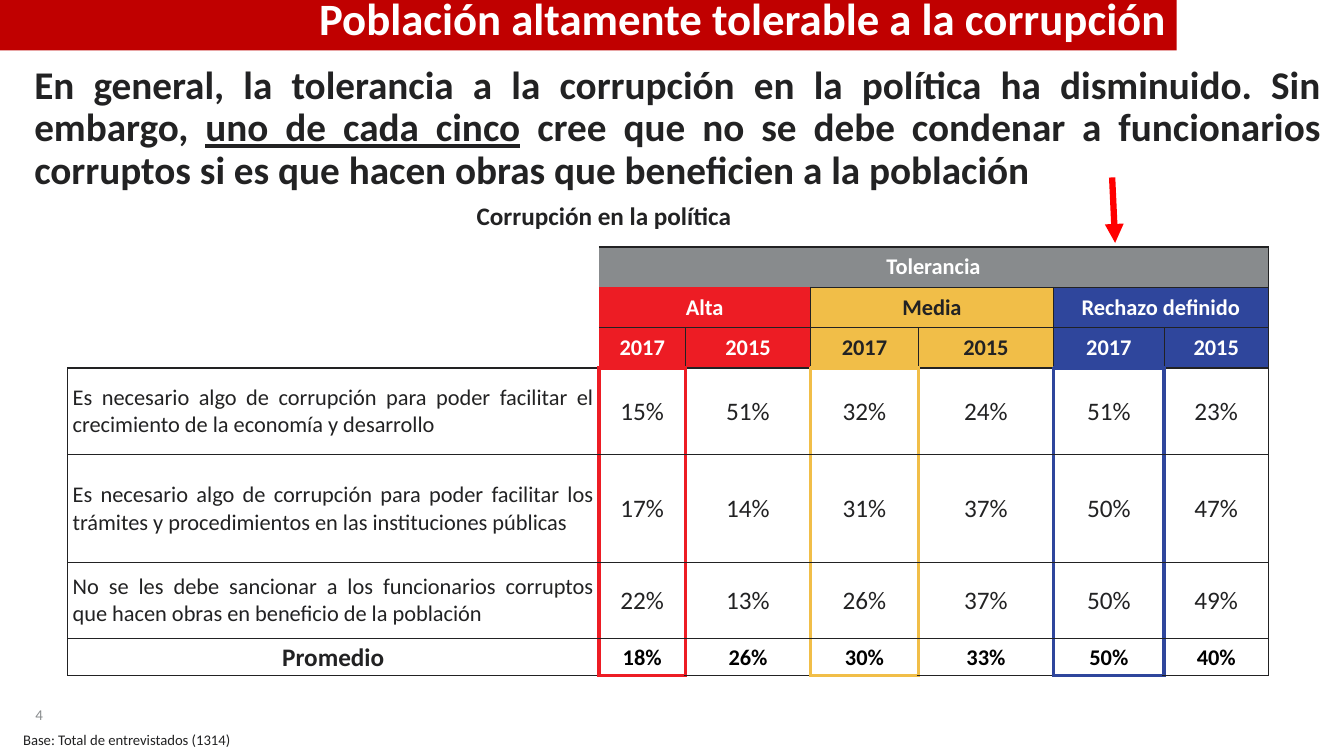
from lxml.etree import SubElement
from pptx import Presentation
from pptx.dml.color import RGBColor
from pptx.enum.shapes import MSO_CONNECTOR, MSO_SHAPE
from pptx.enum.text import MSO_ANCHOR, MSO_AUTO_SIZE, PP_ALIGN
from pptx.oxml.ns import qn
from pptx.util import Inches, Pt

SLIDE_WIDTH, SLIDE_HEIGHT = Inches(13.33), Inches(7.5)
FONT = "Calibri"
DARK, WHITE, BLACK, GREY = "222223", "FFFFFF", "000000", "888B8D"
BAR_RED, ARROW_RED = "C00000", "FF0000"
NO_TABLE_STYLE = "{2D5ABB26-0587-4C30-8999-92F81FD0307C}"

# name, fill, text colour of each tolerance level
LEVELS = [
    ("Alta", "ED1C24", WHITE),
    ("Media", "F1BE48", DARK),
    ("Rechazo definido", "2F469C", WHITE),
]
YEARS = ("2017", "2015")
STATEMENTS = [
    ("Es necesario algo de corrupción para poder facilitar el crecimiento "
     "de la economía y desarrollo", (15, 51, 32, 24, 51, 23)),
    ("Es necesario algo de corrupción para poder facilitar los trámites y "
     "procedimientos en las instituciones públicas", (17, 14, 31, 37, 50, 47)),
    ("No se les debe sancionar a los funcionarios corruptos que hacen obras "
     "en beneficio de la población", (22, 13, 26, 37, 50, 49)),
]
AVERAGES = (18, 26, 30, 33, 50, 40)
HEADER_ROWS = 3
AVERAGE_ROW = HEADER_ROWS + len(STATEMENTS)

# Percentages of the slide's width and height
COLUMN_SHARES = (39.53, 6.45, 9.3, 8.03, 10.05, 8.25, 7.73)
ROW_SHARES = (4.63, 4.63, 4.63, 11.47, 14.27, 10, 4.93)


def color(hex_code):
    return RGBColor.from_string(hex_code)


def across(share):
    return round(SLIDE_WIDTH * share / 100)


def down(share):
    return round(SLIDE_HEIGHT * share / 100)


def area(left, top, width, height):
    return across(left), down(top), across(width), down(height)


def style(paragraph, size, hex_code, bold=False, align=PP_ALIGN.LEFT):
    paragraph.alignment = align
    for run in paragraph.runs:
        run.font.name = FONT
        run.font.size = Pt(size)
        run.font.bold = bold
        run.font.color.rgb = color(hex_code)


def set_margins(owner, left, top, right, bottom):
    owner.margin_left, owner.margin_top = Inches(left), Inches(top)
    owner.margin_right, owner.margin_bottom = Inches(right), Inches(bottom)


def add_label(slide, place, text, size, hex_code, bold=False,
              align=PP_ALIGN.LEFT, margins=(0, 0, 0, 0), wrap=True,
              anchor=MSO_ANCHOR.TOP):
    frame = slide.shapes.add_textbox(*area(*place)).text_frame
    frame.text = text
    frame.word_wrap = wrap
    frame.vertical_anchor = anchor
    set_margins(frame, *margins)
    style(frame.paragraphs[0], size, hex_code, bold, align)
    return frame


def add_message(slide):
    message = slide.shapes.title
    message.left, message.top, message.width, message.height = area(2.55, 8.67, 95.72, 16.93)
    frame = message.text_frame
    frame.word_wrap = True
    frame.auto_size = MSO_AUTO_SIZE.SHAPE_TO_FIT_TEXT
    frame.vertical_anchor = MSO_ANCHOR.TOP
    set_margins(frame, 0, 0, 0, 0)
    sentence = frame.paragraphs[0]
    for text, underlined in (
        ("En general, la tolerancia a la corrupción en la política ha "
         "disminuido. Sin embargo, ", False),
        ("uno de cada cinco", True),
        (" cree que no se debe condenar a funcionarios corruptos si es que "
         "hacen obras que beneficien a la población", False),
    ):
        run = sentence.add_run()
        run.text = text
        run.font.underline = underlined
    style(sentence, 28, DARK, True, PP_ALIGN.JUSTIFY)
    sentence.line_spacing = 0.9
    sentence.space_before = Pt(5.4)


def add_heading_bar(slide):
    bar = slide.shapes.add_shape(MSO_SHAPE.RECTANGLE, *area(0, 0, 87.55, 6.67))
    bar.shadow.inherit = False
    bar.fill.solid()
    bar.fill.fore_color.rgb = color(BAR_RED)
    bar.line.fill.background()
    frame = bar.text_frame
    frame.text = "Población altamente tolerable a la corrupción"
    frame.vertical_anchor = MSO_ANCHOR.BOTTOM
    style(frame.paragraphs[0], 32, WHITE, True, PP_ALIGN.RIGHT)
    frame.paragraphs[0].line_spacing = 0.9


def add_arrow(slide, start, end):
    arrow = slide.shapes.add_connector(
        MSO_CONNECTOR.STRAIGHT, across(start[0]), down(start[1]), across(end[0]), down(end[1]))
    arrow.line.color.rgb = color(ARROW_RED)
    arrow.line.width = Pt(4.5)
    SubElement(arrow.line._get_or_add_ln(), qn("a:tailEnd"), type="triangle")
    SubElement(arrow._element.spPr, qn("a:effectLst"))


def edge(row, column, side):
    """Colour and width of a cell's side, or None where it has no line."""
    if row < HEADER_ROWS:
        if column == 0 and (row, side) != (HEADER_ROWS - 1, "B"):
            return None
        if column == 1 and side == "L":
            return None
        if column in (1, 2) and (row, side) in ((0, "B"), (1, "T")):
            return None
    if side in "LR":
        boundary = column + (side == "R")
        framed = row >= HEADER_ROWS and 1 <= boundary <= 6
    else:
        boundary = column
        framed = column % 2 == 1 and row + (side == "B") in (HEADER_ROWS, AVERAGE_ROW + 1)
    return (LEVELS[(boundary - 1) // 2][1], 3) if framed else (DARK, 1)


def draw_borders(cell, row, column):
    properties = cell._tc.get_or_add_tcPr()
    for position, side in enumerate("LRTB"):
        border = edge(row, column, side)
        line = SubElement(properties, qn(f"a:ln{side}"))
        properties.insert(position, line)
        if border is None:
            SubElement(line, qn("a:noFill"))
            continue
        hex_code, width = border
        line.set("w", str(Pt(width)))
        SubElement(SubElement(line, qn("a:solidFill")), qn("a:srgbClr"), val=hex_code)


def fill_cell(cell, text, size, hex_code, bold=False, fill=None,
              align=PP_ALIGN.CENTER, margins=(0.01, 0.01, 0.01, 0)):
    cell.text = text
    cell.vertical_anchor = MSO_ANCHOR.MIDDLE
    set_margins(cell, *margins)
    style(cell.text_frame.paragraphs[0], size, hex_code, bold, align)
    if fill:
        cell.fill.solid()
        cell.fill.fore_color.rgb = color(fill)


def fill_header(cell, text, hex_code, fill):
    fill_cell(cell, text, 16, hex_code, True, fill, margins=(0.02, 0.04, 0.02, 0.04))


def add_tolerance_table(slide):
    place = area(5.03, 32.67, sum(COLUMN_SHARES), sum(ROW_SHARES))
    table = slide.shapes.add_table(len(ROW_SHARES), len(COLUMN_SHARES), *place).table
    table.first_row = table.horz_banding = False
    table._tbl.tblPr.find(qn("a:tableStyleId")).text = NO_TABLE_STYLE
    for column, share in zip(table.columns, COLUMN_SHARES):
        column.width = across(share)
    for row, share in zip(table.rows, ROW_SHARES):
        row.height = down(share)
    for row in range(len(ROW_SHARES)):
        for column in range(len(COLUMN_SHARES)):
            cell = table.cell(row, column)
            cell.fill.background()
            draw_borders(cell, row, column)

    table.cell(0, 1).merge(table.cell(0, 6))
    fill_header(table.cell(0, 1), "Tolerancia", WHITE, GREY)
    for index, (level, fill, text_color) in enumerate(LEVELS):
        first = 1 + index * len(YEARS)
        table.cell(1, first).merge(table.cell(1, first + 1))
        fill_header(table.cell(1, first), level, text_color, fill)
        for offset, year in enumerate(YEARS):
            fill_header(table.cell(2, first + offset), year, text_color, fill)

    for row, (statement, shares) in enumerate(STATEMENTS, HEADER_ROWS):
        fill_cell(table.cell(row, 0), statement, 16, DARK,
                  align=PP_ALIGN.JUSTIFY, margins=(0.05,) * 4)
        for column, share in enumerate(shares, 1):
            fill_cell(table.cell(row, column), f"{share}%", 18, DARK)
    fill_cell(table.cell(AVERAGE_ROW, 0), "Promedio", 18, DARK, True)
    for column, average in enumerate(AVERAGES, 1):
        fill_cell(table.cell(AVERAGE_ROW, column), f"{average}%", 16, BLACK, True)


def main():
    deck = Presentation()
    deck.slide_width, deck.slide_height = SLIDE_WIDTH, SLIDE_HEIGHT
    slide = deck.slides.add_slide(deck.slide_layouts[5])
    add_label(slide, (2.63, 91.07, 3.38, 4.67), "4", 10.7, GREY, wrap=False,
              anchor=MSO_ANCHOR.BOTTOM)
    add_message(slide)
    add_tolerance_table(slide)
    add_label(slide, (0.98, 96, 17.7, 2.67), "Base: Total de entrevistados (1314)",
              10.5, DARK, margins=(0.1, 0.05, 0.1, 0.05))
    add_label(slide, (28.58, 26.53, 32.71, 4), "Corrupción en la política", 18, DARK,
              True, PP_ALIGN.CENTER)
    add_heading_bar(slide)
    add_arrow(slide, (82.75, 23.47), (82.97, 32.13))
    deck.save("out.pptx")


if __name__ == "__main__":
    main()
